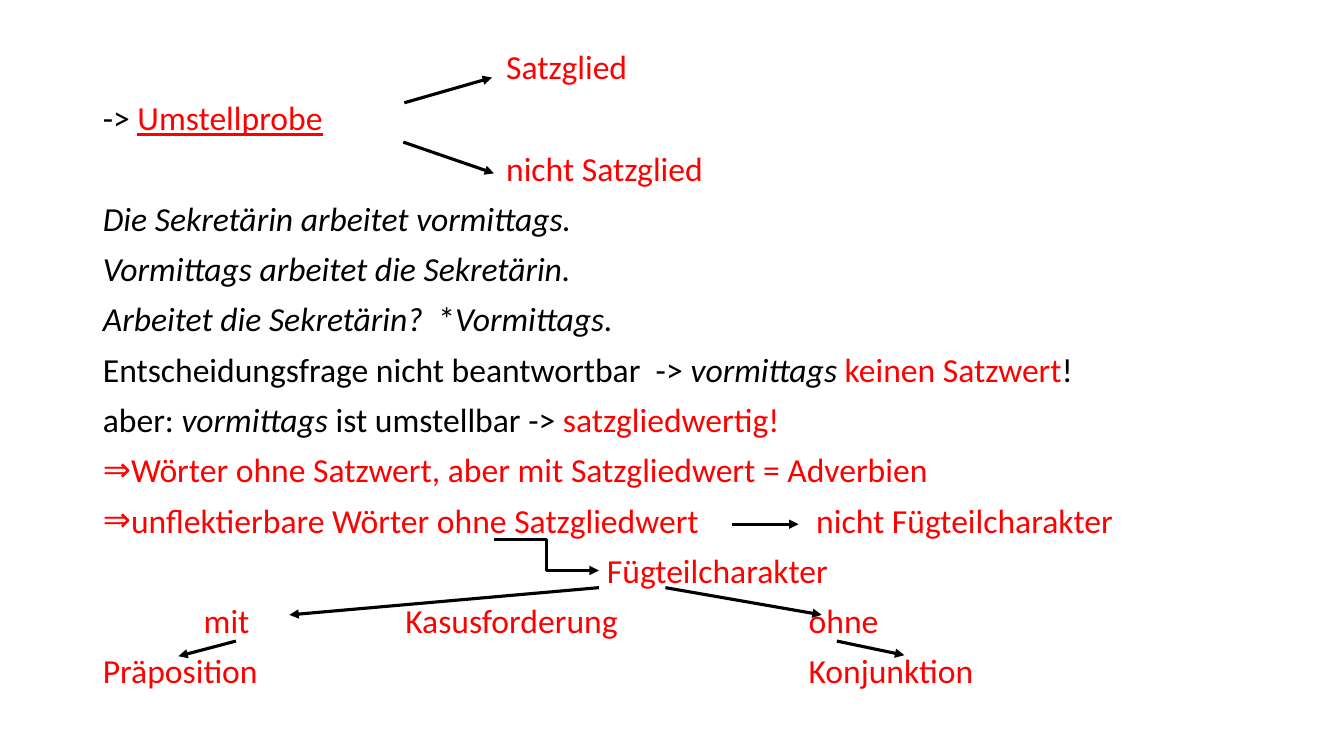
from pptx import Presentation
from pptx import util as u
from pptx.dml.color import RGBColor
from pptx.enum import shapes, text
from pptx.oxml.ns import qn
from lxml import etree

BLACK, RED = RGBColor(0, 0, 0), RGBColor(255, 0, 0)
THEME = {
    "font": "Calibri",
    "arrow": BLACK,
    "arrow_width": u.Pt(2.25),
    "styles": {
        "lead": {"size": u.Pt(28), "color": BLACK},
        "plain": {"size": u.Pt(24), "color": BLACK},
        "key": {"size": u.Pt(24), "color": RED},
        "term": {"size": u.Pt(24), "color": RED, "underline": True},
        "example": {"size": u.Pt(24), "color": BLACK, "italic": True},
    },
}
BODY_BOX = (0.92, 0.4, 11.5, 6.82)
TAB = 1
BULLET, BULLET_INDENT = "⇒", 0.25

# Each line: (has bullet, [(style, text), ...])
LINES = [
    (False, [("lead", "\t\t\t\t"), ("key", "Satzglied")]),
    (False, [("plain", "-> "), ("term", "Umstellprobe")]),
    (False, [("key", "\t\t\t\tnicht Satzglied")]),
    (False, [("example", "Die Sekretärin arbeitet vormittags.")]),
    (False, [("example", "Vormittags arbeitet die Sekretärin.")]),
    (False, [("example", "Arbeitet die Sekretärin?  "), ("plain", "*"),
             ("example", "Vormittags.")]),
    (False, [("plain", "Entscheidungsfrage nicht beantwortbar  -> "),
             ("example", "vormittags "), ("key", "keinen Satzwert"), ("plain", "!")]),
    (False, [("plain", "aber: "), ("example", "vormittags"),
             ("plain", " ist umstellbar -> "), ("key", "satzgliedwertig!")]),
    (True, [("key", "Wörter ohne Satzwert, aber mit Satzgliedwert = Adverbien")]),
    (True, [("key", "unflektierbare Wörter ohne Satzgliedwert\t\t nicht Fügteilcharakter")]),
    (False, [("key", "\t\t\t\t\tFügteilcharakter")]),
    (False, [("key", "\tmit\t\tKasusforderung\t\tohne")]),
    (False, [("key", "Präposition\t\t\t\t\t\tKonjunktion")]),
]

STRAIGHT, ELBOW = shapes.MSO_CONNECTOR.STRAIGHT, shapes.MSO_CONNECTOR.ELBOW
# Each arrow: (kind, start x, start y, end x, end y)
ARROWS = [
    (STRAIGHT, 4.01, 1.02, 4.88, 0.77),
    (STRAIGHT, 4.0, 1.41, 4.9, 1.72),
    (STRAIGHT, 7.26, 5.2, 7.92, 5.2),
    (ELBOW, 4.9, 5.35, 5.94, 5.66),
    (STRAIGHT, 5.94, 5.83, 2.87, 6.1),
    (STRAIGHT, 6.6, 5.83, 8.15, 6.1),
    (STRAIGHT, 2.34, 6.36, 1.77, 6.51),
    (STRAIGHT, 8.3, 6.36, 8.97, 6.5),
]


def format_paragraph(p, bullet):
    p.alignment = text.PP_ALIGN.LEFT
    p.line_spacing = 0.9
    p.space_before, p.space_after = u.Pt(10), u.Pt(0)
    indent = u.Inches(BULLET_INDENT if bullet else 0)
    pPr = p._p.get_or_add_pPr()
    for name, value in {"marL": indent, "indent": -indent,
                        "defTabSz": u.Inches(TAB)}.items():
        pPr.set(name, str(int(value)))
    if bullet:
        etree.SubElement(pPr, qn("a:buFont")).set("typeface", THEME["font"])
        etree.SubElement(pPr, qn("a:buChar")).set("char", BULLET)
    else:
        etree.SubElement(pPr, qn("a:buNone"))


def add_run(p, style, words):
    r = p.add_run()
    r.text = words
    r.font.name = THEME["font"]
    for name, value in THEME["styles"][style].items():
        if name == "color":
            r.font.color.rgb = value
        else:
            setattr(r.font, name, value)


def fill_body(body):
    body.left, body.top, body.width, body.height = map(u.Inches, BODY_BOX)
    tf = body.text_frame
    tf.word_wrap = True
    tf.auto_size = text.MSO_AUTO_SIZE.NONE
    tf.vertical_anchor = text.MSO_ANCHOR.TOP
    for i, (bullet, runs) in enumerate(LINES):
        p = tf.add_paragraph() if i else tf.paragraphs[0]
        format_paragraph(p, bullet)
        for style, words in runs:
            add_run(p, style, words)


def add_arrow(s, kind, *ends):
    arrow = s.shapes.add_connector(kind, *map(u.Inches, ends))
    arrow.line.color.rgb = THEME["arrow"]
    arrow.line.width = THEME["arrow_width"]
    etree.SubElement(arrow.line._get_or_add_ln(), qn("a:tailEnd")).set("type", "triangle")
    etree.SubElement(arrow._element.spPr, qn("a:effectLst"))


def main():
    prs = Presentation()
    prs.slide_width, prs.slide_height = u.Inches(13.33), u.Inches(7.5)
    s = prs.slides.add_slide(prs.slide_layouts[1])
    title = s.shapes.title._element
    title.getparent().remove(title)
    fill_body(s.placeholders[1])
    for arrow in ARROWS:
        add_arrow(s, *arrow)
    prs.save("out.pptx")


if __name__ == "__main__":
    main()
